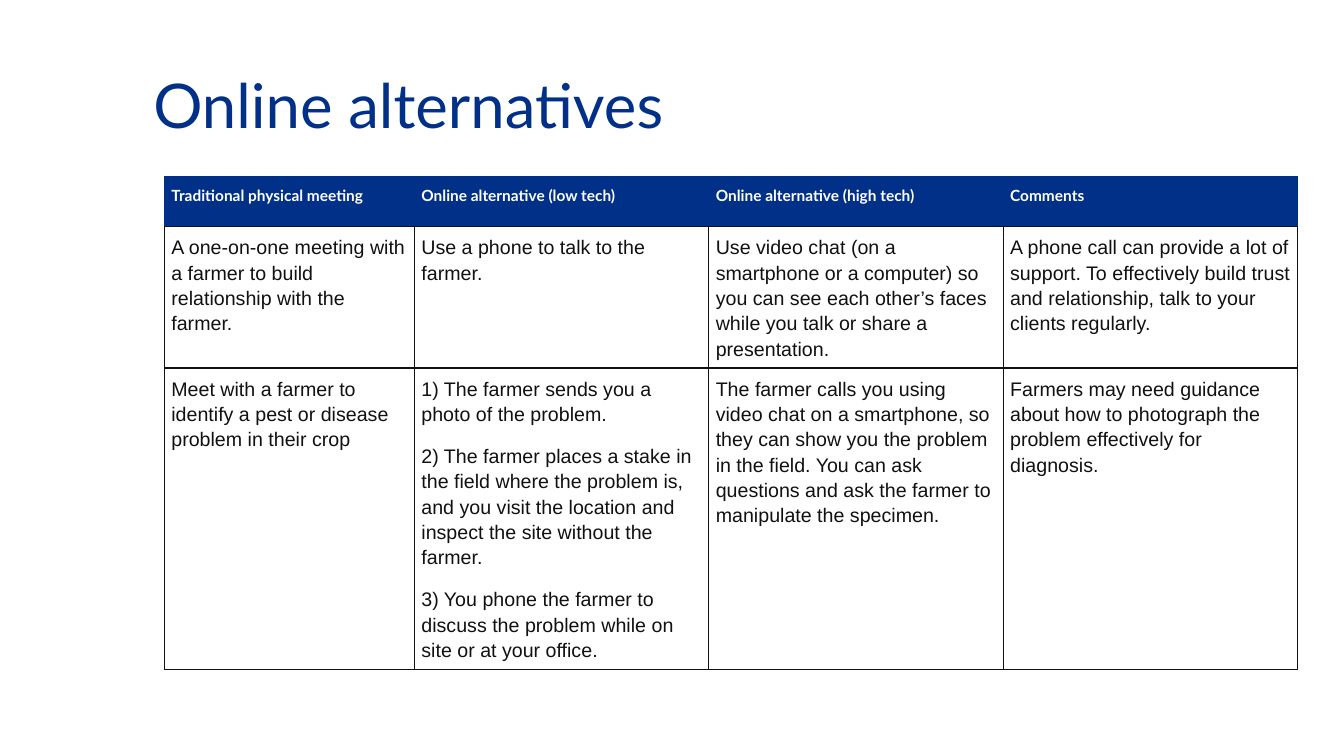
from dataclasses import dataclass
from lxml.etree import SubElement as Sub
from pptx import Presentation
from pptx.dml.color import RGBColor as Rgb
from pptx.enum.text import MSO_ANCHOR as Anchor, PP_ALIGN as Align
from pptx.oxml.ns import qn
from pptx.util import Pt

PX = 9144


@dataclass(frozen=True)
class Theme:
    navy: str = "003087"
    edge: str = "002F84"
    ink: str = "111111"
    white: str = "FFFFFF"
    head: str = "Lato"
    body: str = "Arial"
    title: int = 44
    label: int = 11
    text: int = 14
    thin: float = 0.75
    line: float = 1


THEME = Theme()
WIDTHS = [248, 292, 292, 292]
HEIGHTS = [50, 140, 299]
ROWS = [
    ["Traditional physical meeting", "Online alternative (low tech)",
     "Online alternative (high tech)", "Comments"],
    ["A one-on-one meeting with a farmer to build relationship with the farmer.",
     "Use a phone to talk to the farmer.",
     "Use video chat (on a smartphone or a computer) so you can see each "
     "other’s faces while you talk or share a presentation.",
     "A phone call can provide a lot of support. To effectively build trust "
     "and relationship, talk to your clients regularly."],
    ["Meet with a farmer to identify a pest or disease problem in their crop",
     "1) The farmer sends you a photo of the problem.\n"
     "2) The farmer places a stake in the field where the problem is, and you "
     "visit the location and inspect the site without the farmer.\n"
     "3) You phone the farmer to discuss the problem while on site or at your office.",
     "The farmer calls you using video chat on a smartphone, so they can show "
     "you the problem in the field. You can ask questions and ask the farmer "
     "to manipulate the specimen.",
     "Farmers may need guidance about how to photograph the problem "
     "effectively for diagnosis."],
]


def px(*vals):
    return [val * PX for val in vals]


def write(frame, text, font, size, color, bold=False, lead=None, gap=0):
    frame.text = text
    for i, para in enumerate(frame.paragraphs):
        para.alignment = Align.LEFT
        if lead:
            para.line_spacing = lead
        para.space_before = Pt(gap if i else 0)
        para.space_after = Pt(gap)
        face = para.runs[0].font
        face.name, face.size, face.bold = font, Pt(size), bold
        face.color.rgb = Rgb.from_string(color)


def border(cell, side, color, width):
    props = cell._tc.get_or_add_tcPr()
    line = Sub(props, qn(f"a:ln{side}"), w=str(Pt(width)))
    fill = Sub(line, qn("a:solidFill"))
    Sub(fill, qn("a:srgbClr"), val=color)


def style(cell, text, head):
    for side in "LRTB":
        if head and side != "B":
            border(cell, side, THEME.edge, THEME.thin)
        else:
            border(cell, side, THEME.ink, THEME.line)
    cell.fill.solid()
    cell.fill.fore_color.rgb = Rgb.from_string(THEME.navy if head else THEME.white)
    cell.margin_left = cell.margin_right = 7 * PX
    cell.margin_top = cell.margin_bottom = 7 * PX
    if head:
        write(cell.text_frame, text, THEME.head, THEME.label, THEME.white,
              bold=True, lead=1.15)
    else:
        write(cell.text_frame, text, THEME.body, THEME.text, THEME.ink,
              lead=1.15, gap=6)


def heading(slide, text, box):
    title = slide.shapes.title
    title.left, title.top, title.width, title.height = px(*box)
    title.text_frame.vertical_anchor = Anchor.MIDDLE
    write(title.text_frame, text, THEME.head, THEME.title, THEME.navy)


def grid(slide, rows, left, top):
    box = px(left, top, sum(WIDTHS), sum(HEIGHTS))
    table = slide.shapes.add_table(len(rows), len(WIDTHS), *box).table
    for col, width in zip(table.columns, px(*WIDTHS)):
        col.width = width
    for row, high in zip(table.rows, px(*HEIGHTS)):
        row.height = high
    for r, row in enumerate(rows):
        for c, text in enumerate(row):
            style(table.cell(r, c), text, head=r == 0)


def main():
    deck = Presentation()
    deck.slide_width, deck.slide_height = px(1333, 750)
    slide = deck.slides.add_slide(deck.slide_layouts[5])
    heading(slide, "Online alternatives", (142, 52, 1125, 103))
    grid(slide, ROWS, 163, 175)
    deck.save("out.pptx")


if __name__ == "__main__":
    main()
